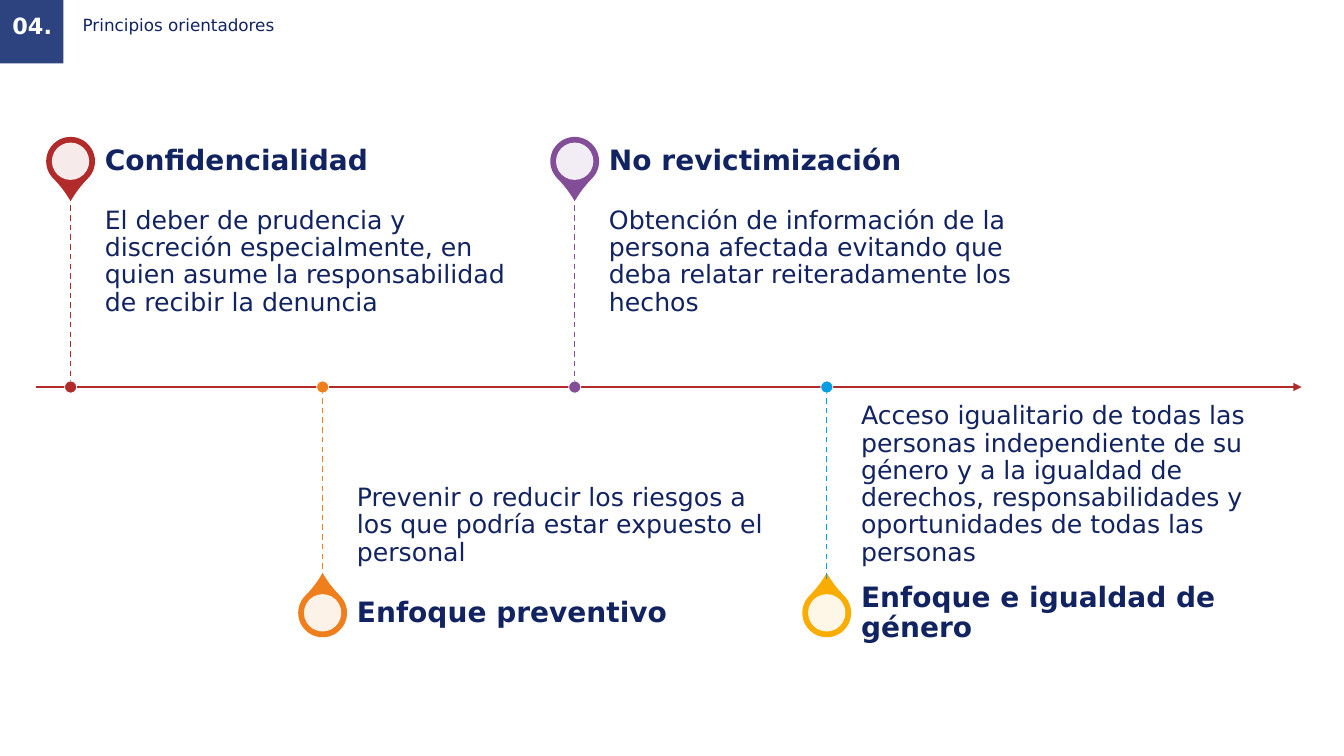
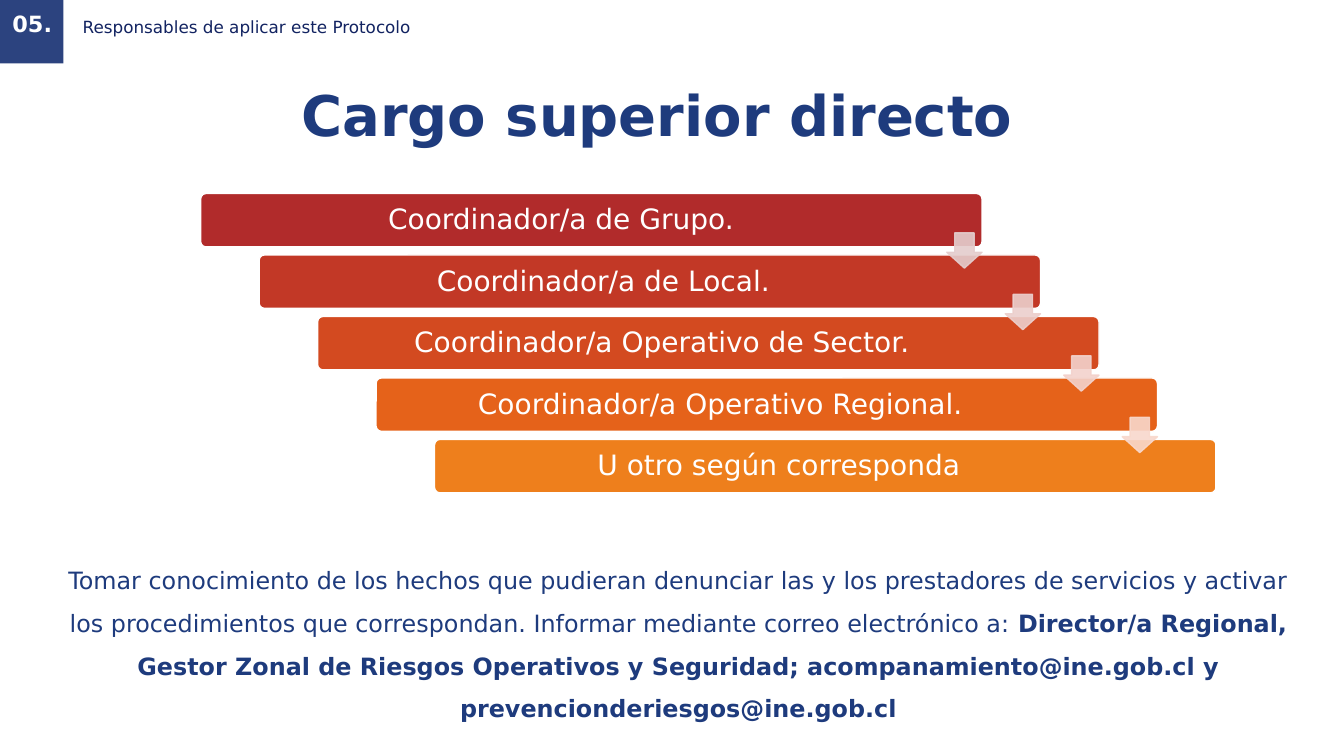
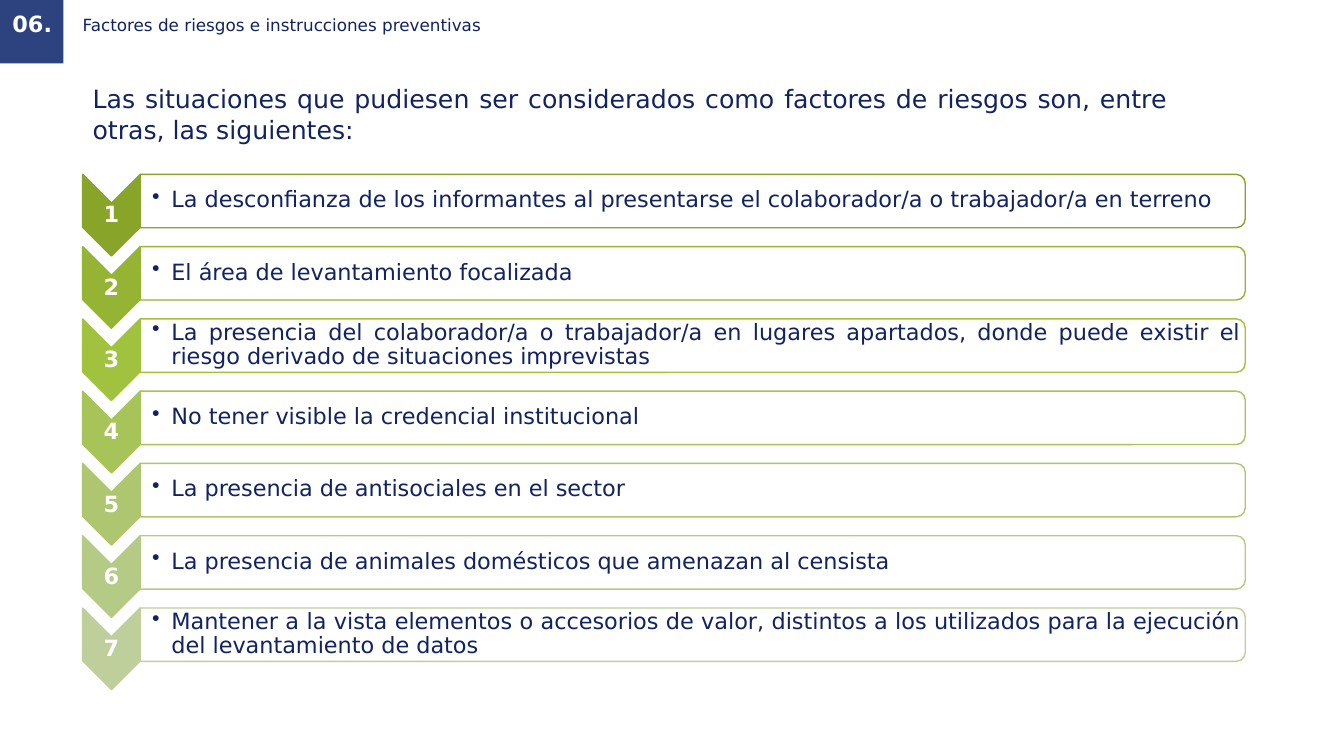
from lxml import etree
from pptx import Presentation
from pptx.dml.color import RGBColor
from pptx.enum.dml import MSO_LINE
from pptx.enum.shapes import MSO_CONNECTOR, MSO_SHAPE as Shape
from pptx.enum.text import MSO_ANCHOR as Anchor, PP_ALIGN as Align
from pptx.oxml.ns import qn
from pptx.util import Inches, Pt

FONT = "DejaVu Sans"
NAVY, BLUE, BAND, WHITE = "122361", "1E3B7D", "2C437F", "FFFFFF"
RED, ORANGE, PURPLE, AMBER, SKY = "B12B2B", "EE7F1C", "824E98", "F9AD00", "049EE2"

MILESTONES = [
    ("Confidencialidad",
     "El deber de prudencia y discreción especialmente, en quien asume la "
     "responsabilidad de recibir la denuncia", RED, RED),
    ("Enfoque preventivo",
     "Prevenir o reducir los riesgos a los que podría estar "
     "expuesto el personal", ORANGE, ORANGE),
    ("No revictimización",
     "Obtención de información de la persona afectada "
     "evitando que deba relatar reiteradamente los hechos", PURPLE, PURPLE),
    ("Enfoque e igualdad de género",
     "Acceso igualitario de todas las personas independiente de su género y a la "
     "igualdad de derechos, responsabilidades y oportunidades de todas "
     "las personas", AMBER, SKY),
]
POSITIONS = [
    ("Coordinador/a de Grupo.", "B12B2B", "E4CDCD"),
    ("Coordinador/a de Local.", "C23826", "ECCFCC"),
    ("Coordinador/a Operativo de Sector.", "D34A20", "F3D2CC"),
    ("Coordinador/a Operativo Regional.", "E5621A", "F8D8CC"),
    ("U otro según corresponda", "EE7F1C", None),
]
RISKS = [
    ("La desconfianza de los informantes al presentarse el colaborador/a o "
     "trabajador/a en terreno", "88A429"),
    ("El área de levantamiento focalizada", "95B433"),
    ("La presencia del colaborador/a o trabajador/a en lugares apartados, donde "
     "puede existir el riesgo derivado de situaciones imprevistas", "A0C23F"),
    ("No tener visible la credencial institucional", "A6C458"),
    ("La presencia de antisociales en el sector", "ADC66F"),
    ("La presencia de animales domésticos que amenazan al censista", "B5CA85"),
    ("Mantener a la vista elementos o accesorios de valor, distintos a los "
     "utilizados para la ejecución del levantamiento de datos", "BECF9B"),
]


def color(hex_value):
    return RGBColor.from_string(hex_value)


def set_opacity(fill_parent, percent):
    """Make the solid fill held by an XML element partly transparent."""
    rgb = fill_parent.find(qn("a:solidFill")).find(qn("a:srgbClr"))
    etree.SubElement(rgb, qn("a:alpha"), val=str(percent * 1000))


def add_bullet(paragraph, indent):
    properties = paragraph._p.get_or_add_pPr()
    properties.set("marL", str(Inches(indent)))
    properties.set("indent", str(-Inches(indent)))
    etree.SubElement(properties, qn("a:buChar"), char="•")


def add_text(slide, box, text, size=16, fill=NAVY, bold=False, align=Align.LEFT,
             anchor=Anchor.TOP, insets=(0.1, 0.05, 0.1, 0.05), spacing=0.9,
             bullet_indent=None):
    """Write one paragraph; text is a string or a list of (string, bold) runs."""
    frame = slide.shapes.add_textbox(*map(Inches, box)).text_frame
    frame.word_wrap = True
    frame.vertical_anchor = anchor
    (frame.margin_left, frame.margin_top,
     frame.margin_right, frame.margin_bottom) = map(Inches, insets)
    paragraph = frame.paragraphs[0]
    if bullet_indent:
        add_bullet(paragraph, bullet_indent)
    paragraph.alignment = align
    paragraph.line_spacing = spacing
    for words, is_bold in [(text, bold)] if isinstance(text, str) else text:
        run = paragraph.add_run()
        run.text = words
        run.font.name = FONT
        run.font.size = Pt(size)
        run.font.bold = is_bold
        run.font.color.rgb = color(fill)


def add_figure(slide, kind, box, fill, line=None, width=1, rotation=0,
               adjustments=(), opacity=None, line_opacity=None):
    shape = slide.shapes.add_shape(kind, *map(Inches, box))
    shape.shadow.inherit = False
    shape.rotation = rotation
    for index, value in enumerate(adjustments):
        shape.adjustments[index] = value
    shape.fill.solid()
    shape.fill.fore_color.rgb = color(fill)
    if opacity:
        set_opacity(shape._element.spPr, opacity)
    if line:
        shape.line.color.rgb = color(line)
        shape.line.width = Pt(width)
        if line_opacity:
            set_opacity(shape.line._get_or_add_ln(), line_opacity)
    else:
        shape.line.fill.background()
    return shape


def add_line(slide, start, end, fill, width, dashed=False, arrow=False):
    line = slide.shapes.add_connector(
        MSO_CONNECTOR.STRAIGHT, *map(Inches, (*start, *end)))
    line.line.color.rgb = color(fill)
    line.line.width = Pt(width)
    if dashed:
        line.line.dash_style = MSO_LINE.DASH
    if arrow:
        etree.SubElement(line.line._get_or_add_ln(), qn("a:tailEnd"), type="triangle")
    etree.SubElement(line._element.spPr, qn("a:effectLst"))


def add_disc(slide, center_x, center_y, size, fill, **options):
    box = (center_x - size / 2, center_y - size / 2, size, size)
    add_figure(slide, Shape.OVAL, box, fill, **options)


def new_slide(presentation, number, heading, heading_top=-0.01, number_top=0.06):
    """Add a slide with the numbered corner and the section heading."""
    slide = presentation.slides.add_slide(presentation.slide_layouts[6])
    add_figure(slide, Shape.RECTANGLE, (0, 0, 0.63, 0.63), BAND)
    add_text(slide, (0.82, heading_top, 11.91, 0.54), heading, size=12,
             anchor=Anchor.MIDDLE, insets=(0, 0.05, 0.1, 0.05))
    add_text(slide, (0, number_top, 0.64, 0.38), number, fill=WHITE, bold=True,
             align=Align.CENTER, anchor=Anchor.MIDDLE)
    return slide


def add_milestone(slide, stem_x, axis_y, above, title, body, pin_color, stem_color):
    """Place a pin, its texts and its stem on one side of the axis."""
    side = -1 if above else 1
    pin_y, stem_end = axis_y + side * 2.24, axis_y + side * 1.9
    pin, text_x, text_width = 0.47, stem_x + 0.34, 4.17
    add_figure(slide, Shape.TEAR, (stem_x - pin / 2, pin_y - pin / 2, pin, pin),
               pin_color, line=pin_color, rotation=135 if above else 315,
               adjustments=[1.15])
    add_disc(slide, stem_x, pin_y, 0.37, WHITE, opacity=90)
    add_text(slide, (text_x, min(axis_y, stem_end), text_width, 1.9), body, size=18,
             anchor=Anchor.TOP if above else Anchor.BOTTOM,
             insets=(0, 0.12, 0.12, 0.19) if above else (0, 0.19, 0, 0.12))
    add_text(slide, (text_x, pin_y - 0.33, text_width, 0.67), title, size=20,
             bold=True, anchor=Anchor.MIDDLE, insets=(0, 0, 0.14, 0))
    add_line(slide, (stem_x, stem_end), (stem_x, axis_y), stem_color, 1, dashed=True)
    add_disc(slide, stem_x, axis_y, 0.12, stem_color, line=WHITE, width=0.5)


def add_timeline(slide, left, axis_y, width):
    add_line(slide, (left, axis_y), (left + width, axis_y), RED, 1.5, arrow=True)
    for index, milestone in enumerate(MILESTONES):
        add_milestone(slide, left + 0.34 + 2.5 * index, axis_y, index % 2 == 0,
                      *milestone)


def add_staircase(slide, left, top):
    """Draw the stepped bars, then the arrows that lead from one to the next."""
    step_x, step_y, bar_width = 0.58, 0.61, 7.75
    for index, (label, fill, _) in enumerate(POSITIONS):
        x, y = left + index * step_x, top + index * step_y
        add_figure(slide, Shape.ROUNDED_RECTANGLE, (x, y, bar_width, 0.53), fill,
                   line=WHITE, adjustments=[0.1])
        label_width = 6.79 if index else 7.11
        add_text(slide, (x + 0.02, y + 0.02, label_width, 0.5), label, size=20,
                 fill=WHITE, align=Align.CENTER, anchor=Anchor.MIDDLE,
                 insets=(0.08,) * 4)
    for index, (_, _, fill) in enumerate(POSITIONS[:-1]):
        box = (left + 7.4 + index * step_x, top + 0.39 + index * step_y, 0.35, 0.35)
        add_figure(slide, Shape.DOWN_ARROW, box, fill, line=fill,
                   adjustments=[0.55, 0.45], opacity=90, line_opacity=90)


def add_risk(slide, left, top, number, text, fill):
    """Place a numbered chevron and the bar to its right."""
    chevron_width, chevron_height = 0.57, 0.81
    bar_length, bar_height = 10.96, 0.53
    turn = (chevron_height - chevron_width) / 2
    add_figure(slide, Shape.CHEVRON,
               (left - turn, top + turn, chevron_height, chevron_width), fill,
               line=fill, rotation=90)
    add_text(slide, (left, top + 0.29, chevron_width, 0.24), str(number), fill=WHITE,
             bold=True, align=Align.CENTER, anchor=Anchor.MIDDLE, insets=(0.01,) * 4)
    bar_left, turn = left + chevron_width, (bar_length - bar_height) / 2
    add_figure(slide, Shape.ROUND_2_SAME_RECTANGLE,
               (bar_left + turn, top - turn, bar_height, bar_length), WHITE,
               line=fill, rotation=90, opacity=90)
    add_text(slide, (bar_left, top + 0.02, 10.93, 0.48), text, align=Align.JUSTIFY,
             anchor=Anchor.MIDDLE, insets=(0.12, 0.01, 0.01, 0.01),
             bullet_indent=0.19)


def build_principles(presentation):
    slide = new_slide(presentation, "04.", "Principios orientadores", number_top=0.08)
    add_timeline(slide, 0.36, 3.84, 12.55)


def build_responsibles(presentation):
    slide = new_slide(presentation, "05.", "Responsables de aplicar este Protocolo",
                      heading_top=0.01)
    add_text(slide, (1.99, 0.75, 9.05, 1.17), "Cargo superior directo", size=40,
             fill=BLUE, bold=True, align=Align.CENTER, spacing=1)
    duties = [
        ("Tomar conocimiento de los hechos que pudieran denunciar las y los "
         "prestadores de servicios y activar los procedimientos que correspondan. "
         "Informar mediante correo electrónico a: ", False),
        ("Director/a Regional, Gestor Zonal de Riesgos Operativos y Seguridad; "
         "acompanamiento@ine.gob.cl y prevencionderiesgos@ine.gob.cl", True),
    ]
    add_text(slide, (0.56, 5.42, 12.34, 1.8), duties, size=17, fill=BLUE,
             align=Align.CENTER, spacing=1.5)
    add_staircase(slide, 1.99, 1.92)


def build_risk_factors(presentation):
    slide = new_slide(presentation, "06.",
                      "Factores de riesgos e instrucciones preventivas")
    add_text(slide, (0.82, 0.78, 10.86, 0.71),
             "Las situaciones que pudiesen ser considerados como factores de riesgos "
             "son, entre otras, las siguientes:", size=18, align=Align.JUSTIFY,
             spacing=1)
    for index, (text, fill) in enumerate(RISKS):
        add_risk(slide, 0.82, 1.73 + 0.717 * index, index + 1, text, fill)


def main():
    presentation = Presentation()
    presentation.slide_width, presentation.slide_height = Inches(13.33), Inches(7.5)
    build_principles(presentation)
    build_responsibles(presentation)
    build_risk_factors(presentation)
    presentation.save("out.pptx")


if __name__ == "__main__":
    main()
